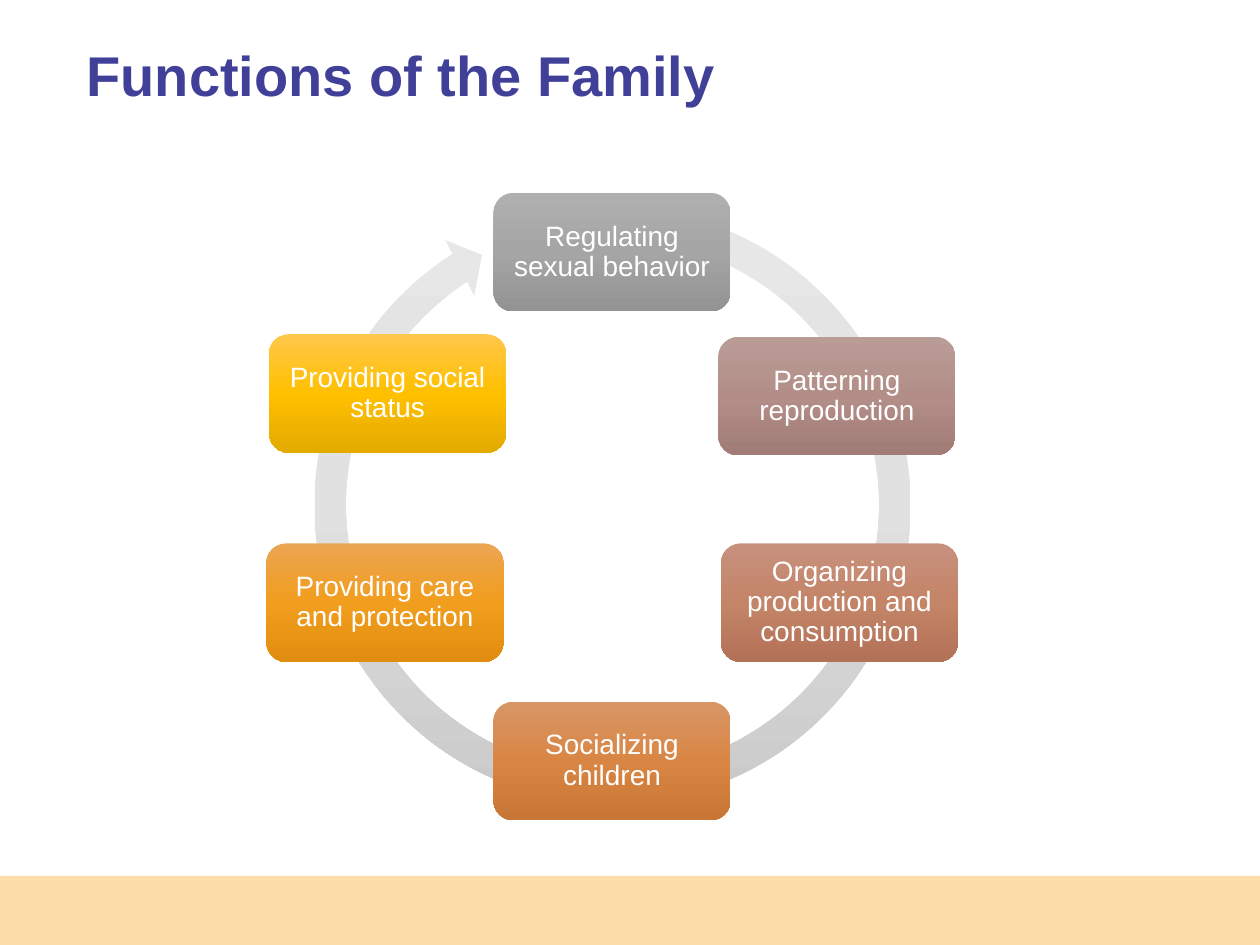
from copy import deepcopy

from pptx import Presentation
from pptx.dml.color import RGBColor
from pptx.enum.shapes import MSO_SHAPE
from pptx.enum.text import MSO_ANCHOR, MSO_AUTO_SIZE, PP_ALIGN
from pptx.util import Pt


def color(value):
    return RGBColor.from_string(value)


def apply(target, values):
    for name, value in values.items():
        setattr(target, name, value)


def margins(size):
    return {f"margin_{side}": Pt(size) for side in ("left", "top", "right", "bottom")}


class SlideBuilder:
    frame_format = {
        "word_wrap": True,
        "auto_size": MSO_AUTO_SIZE.NONE,
        "vertical_anchor": MSO_ANCHOR.MIDDLE,
    }
    title_font = {"name": "Arial", "size": Pt(32), "bold": True}
    function_font = {"name": "Arial", "size": Pt(16), "bold": False}

    def __init__(self, slide):
        self.slide = slide

    def set_text(self, frame, text, font, ink, align, margin):
        apply(frame, {**self.frame_format, **margins(margin)})
        frame.text = text
        paragraph = frame.paragraphs[0]
        apply(paragraph, {"alignment": align, "line_spacing": 0.9})
        apply(paragraph.font, font)
        paragraph.font.color.rgb = color(ink)

    def title(self, text, left, top, width, height):
        heading = self.slide.shapes.title
        apply(heading, {"left": Pt(left), "top": Pt(top),
                        "width": Pt(width), "height": Pt(height)})
        self.set_text(heading.text_frame, text, self.title_font, "414099", PP_ALIGN.LEFT, 0)

    def shape(self, kind, left, top, width, height):
        shape = self.slide.shapes.add_shape(kind, Pt(left), Pt(top), Pt(width), Pt(height))
        shape.shadow.inherit = False
        shape.line.fill.background()
        return shape

    def band(self, left, top, width, height, fill):
        footer = self.shape(MSO_SHAPE.RECTANGLE, left, top, width, height)
        footer.fill.solid()
        footer.fill.fore_color.rgb = color(fill)

    def gradient(self, shape, tones):
        shape.fill.gradient()
        shape.fill.gradient_angle = 270
        stop_list = shape._element.spPr.xpath(".//a:gsLst")[0]
        stop_list.append(deepcopy(stop_list[0]))
        for stop, position, tone in zip(shape.fill.gradient_stops, (0, 0.5, 1), tones):
            stop.position = position
            stop.color.rgb = color(tone)

    def cycle_arrow(self, left, top, size, tones):
        ring = self.shape(MSO_SHAPE.CIRCULAR_ARROW, left, top, size, size)
        for index, value in enumerate((0.05, 3.13, 142.35, 171.23, 0.05)):
            ring.adjustments[index] = value
        self.gradient(ring, tones)

    def function_box(self, text, left, top, width, height, tones):
        box = self.shape(MSO_SHAPE.ROUNDED_RECTANGLE, left, top, width, height)
        self.gradient(box, tones)
        self.set_text(box.text_frame, text, self.function_font, "FFFFFF", PP_ALIGN.CENTER, 5)


FUNCTIONS = [
    ("Regulating sexual behavior", 282, 110.25, ("AFAFAF", "A5A5A5", "939393")),
    ("Patterning reproduction", 410.5, 192.5, ("BA9C97", "B38E88", "A17C77")),
    ("Organizing production and consumption", 412, 310.5, ("C7917E", "C48468", "B37157")),
    ("Socializing children", 282, 401, ("D89666", "D98644", "C87635")),
    ("Providing care and protection", 152.25, 310.5, ("ECA552", "F19D1D", "E18D0F")),
    ("Providing social status", 153.75, 191, ("FFC74B", "FFC000", "E3AA00")),
]


def main():
    presentation = Presentation()
    apply(presentation, {"slide_width": Pt(720), "slide_height": Pt(540)})
    builder = SlideBuilder(presentation.slides.add_slide(presentation.slide_layouts[5]))
    builder.band(0, 500.5, 720, 39.5, "FCDEAB")
    builder.title("Functions of the Family", 49.5, 0, 621, 90)
    builder.cycle_arrow(170.75, 109.5, 358.5, ("E7E7E7", "E1E1E1", "C8C8C8"))
    for text, left, top, tones in FUNCTIONS:
        builder.function_box(text, left, top, 135.5, 67.75, tones)
    presentation.save("out.pptx")


if __name__ == "__main__":
    main()
